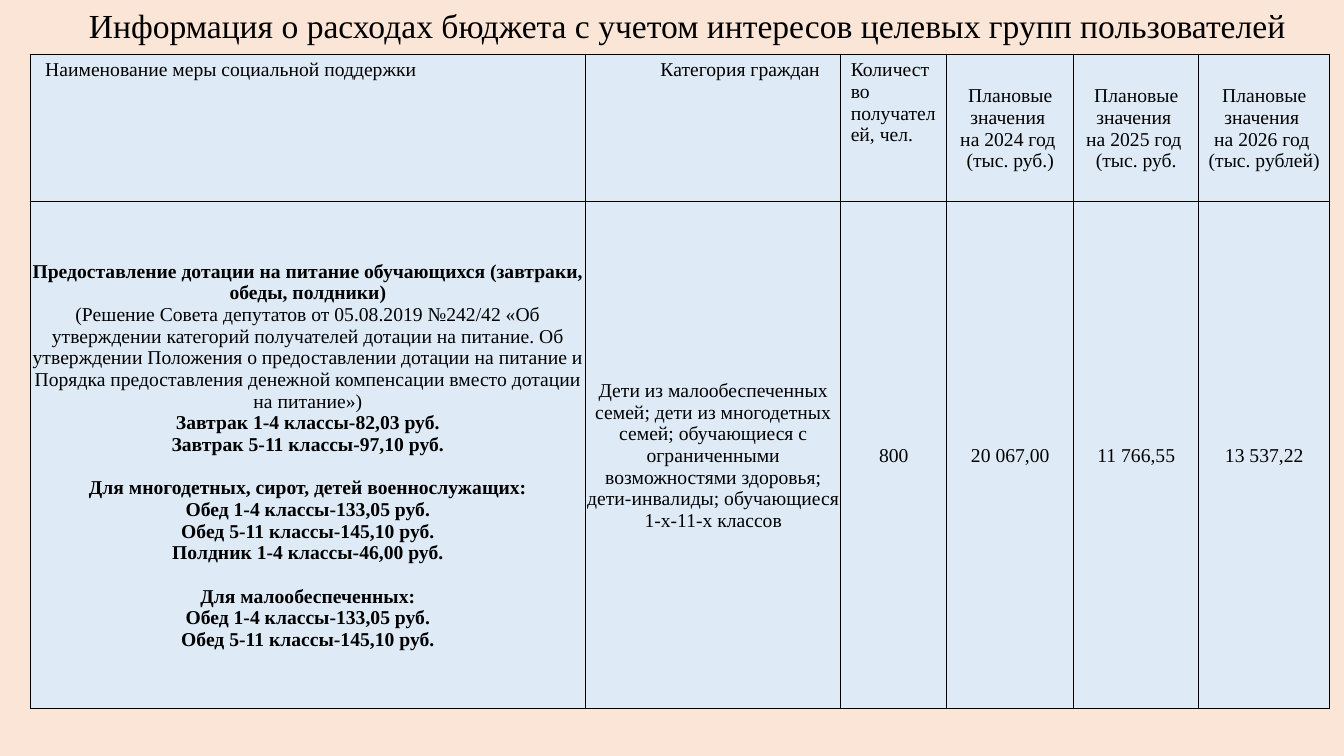
import pptx
import pptx.util
import pptx.dml.color
import pptx.enum.text
import pptx.oxml
from pptx.util import Cm, Pt

COLORS = {"background": "FBE5D6", "cell": "DEEBF7", "ink": "000000"}
FONT = "Times New Roman"
CENTER = pptx.enum.text.PP_ALIGN.CENTER
LEFT = pptx.enum.text.PP_ALIGN.LEFT
TOP = pptx.enum.text.MSO_ANCHOR.TOP
MIDDLE = pptx.enum.text.MSO_ANCHOR.MIDDLE
TIGHT = (0.03, 0.03, 0.03, 0)  # left, top, right, bottom in cm
BLANK_LINE = Pt(15.5)

COLUMN_WIDTHS = [14, 6.43, 2.67, 3.2, 3.15, 3.3]
ROW_HEIGHTS = [3.71, 12.78]

# Header cells: text, alignment, margins
HEADINGS = [
    ("Наименование меры социальной поддержки", LEFT, (0.38, 0.13, 0.25, 0.13)),
    ("Категория граждан", CENTER, (1.61, 0.13, 0.25, 0.13)),
    ("Количество получателей, чел.", LEFT, (0.25, 0.13, 0.25, 0.13)),
]
PLAN_YEARS = [("2024", "(тыс. руб.)"), ("2025", "(тыс. руб."), ("2026", "(тыс. рублей)")]

# Support measure: text, bold, starts a new group
MEASURE = [
    ("Предоставление дотации на питание обучающихся (завтраки, обеды, полдники)", True, False),
    ("(Решение Совета депутатов от 05.08.2019 №242/42 «Об утверждении категорий "
     "получателей дотации на питание. Об утверждении Положения о предоставлении "
     "дотации на питание и Порядка предоставления денежной компенсации вместо "
     "дотации на питание»)", False, False),
    ("Завтрак 1-4 классы-82,03 руб.", True, False),
    ("Завтрак 5-11 классы-97,10 руб.", True, False),
    ("Для многодетных, сирот, детей военнослужащих:", True, True),
    ("Обед 1-4 классы-133,05 руб.", True, False),
    ("Обед 5-11 классы-145,10 руб.", True, False),
    ("Полдник 1-4 классы-46,00 руб.", True, False),
    ("Для малообеспеченных:", True, True),
    ("Обед 1-4 классы-133,05 руб.", True, False),
    ("Обед 5-11 классы-145,10 руб.", True, False),
]
VALUES = [
    "Дети из малообеспеченных семей; дети из многодетных семей; обучающиеся с "
    "ограниченными возможностями здоровья; дети-инвалиды; обучающиеся 1-х-11-х классов",
    "800", "20 067,00", "11 766,55", "13 537,22",
]


def color(name):
    return pptx.dml.color.RGBColor.from_string(COLORS[name])


def write(text_frame, lines, size, alignment):
    for index, (text, bold, new_group) in enumerate(lines):
        paragraph = text_frame.paragraphs[0] if index == 0 else text_frame.add_paragraph()
        paragraph.text = text
        paragraph.alignment = alignment
        if new_group:
            paragraph.space_before = BLANK_LINE
        paragraph.font.name = FONT
        paragraph.font.size = Pt(size)
        paragraph.font.bold = bold
        paragraph.font.color.rgb = color("ink")


def add_borders(cell):
    properties = cell._tc.get_or_add_tcPr()
    for index, side in enumerate(("lnL", "lnR", "lnT", "lnB")):
        properties.insert(index, pptx.oxml.parse_xml(
            f'<a:{side} xmlns:a="http://schemas.openxmlformats.org/drawingml/2006/main" '
            f'w="{Pt(1)}"><a:solidFill><a:srgbClr val="{COLORS["ink"]}"/></a:solidFill></a:{side}>'))


def fill_cell(cell, lines, alignment=CENTER, margins=TIGHT, anchor=MIDDLE):
    cell.fill.solid()
    cell.fill.fore_color.rgb = color("cell")
    cell.margin_left, cell.margin_top, cell.margin_right, cell.margin_bottom = map(Cm, margins)
    cell.vertical_anchor = anchor
    write(cell.text_frame, lines, 14, alignment)
    add_borders(cell)


def add_title(slide, left, top, width, height):
    box = slide.shapes.add_textbox(Cm(left), Cm(top), Cm(width), Cm(height))
    box.text_frame.word_wrap = True
    title = "Информация о расходах бюджета с учетом интересов целевых групп пользователей"
    write(box.text_frame, [(title, False, False)], 24, CENTER)


def add_support_table(slide, left, top, width, height):
    table = slide.shapes.add_table(len(ROW_HEIGHTS), len(COLUMN_WIDTHS),
                                   Cm(left), Cm(top), Cm(width), Cm(height)).table
    table.first_row = False
    table.horz_banding = False
    for column, share in zip(table.columns, COLUMN_WIDTHS):
        column.width = Cm(width * share / sum(COLUMN_WIDTHS))
    for row, share in zip(table.rows, ROW_HEIGHTS):
        row.height = Cm(height * share / sum(ROW_HEIGHTS))

    # Header row
    for column, (text, alignment, margins) in enumerate(HEADINGS):
        fill_cell(table.cell(0, column), [(text, False, False)], alignment, margins, TOP)
    for column, (year, unit) in enumerate(PLAN_YEARS, len(HEADINGS)):
        lines = ["Плановые значения ", f"на {year} год ", unit]
        fill_cell(table.cell(0, column), [(line, False, False) for line in lines])

    # Measure row
    fill_cell(table.cell(1, 0), MEASURE)
    for column, value in enumerate(VALUES, 1):
        fill_cell(table.cell(1, column), [(value, False, False)])


def main():
    presentation = pptx.Presentation()
    presentation.slide_width = Cm(33.87)
    presentation.slide_height = Cm(19.05)
    slide = presentation.slides.add_slide(presentation.slide_layouts[6])
    slide.background.fill.solid()
    slide.background.fill.fore_color.rgb = color("background")
    add_support_table(slide, 0.76, 1.37, 32.75, 16.49)
    add_title(slide, 1.14, 0, 32.36, 1.28)
    presentation.save("out.pptx")


if __name__ == "__main__":
    main()
